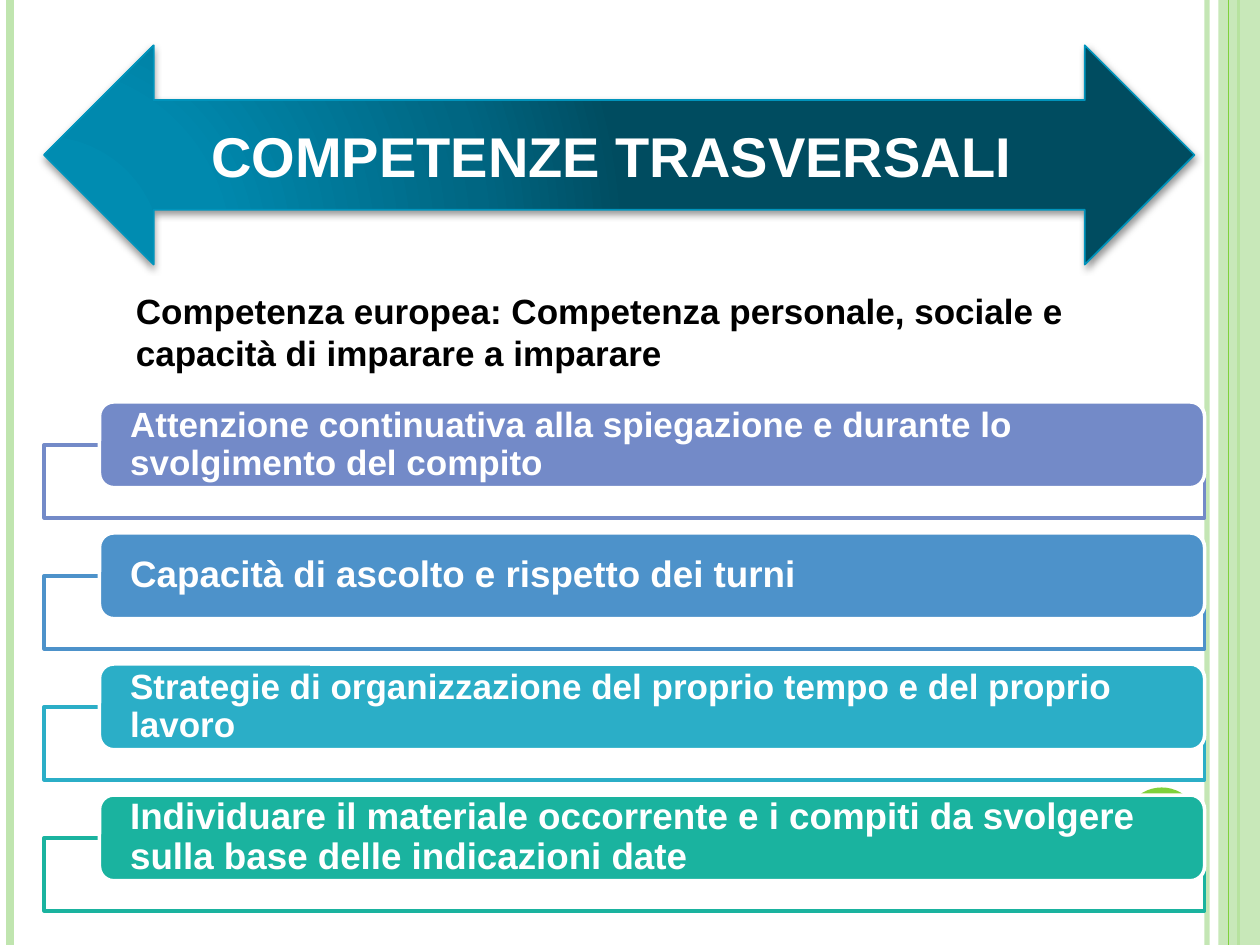
from dataclasses import dataclass

import lxml.etree
import pptx
import pptx.dml.color
import pptx.enum.dml
import pptx.enum.shapes
import pptx.enum.text
import pptx.oxml
import pptx.oxml.ns
import pptx.util

RGBColor = pptx.dml.color.RGBColor
Shapes = pptx.enum.shapes.MSO_SHAPE
Inches = pptx.util.Inches
Pt = pptx.util.Pt

SLIDE_WIDTH = 10
SLIDE_HEIGHT = 7.5
FONT = "Arial"
WHITE = RGBColor(0xFF, 0xFF, 0xFF)
BLACK = RGBColor(0x00, 0x00, 0x00)
PALE_GREEN = RGBColor(0xC0, 0xE5, 0xAF)
GREEN = RGBColor(0x7F, 0xD1, 0x3B)
ARROW_LINE = RGBColor(0x00, 0x94, 0xBC)
ARROW_STOPS = (
    (0, RGBColor(0x00, 0x8E, 0xB4)),
    (30, RGBColor(0x00, 0x89, 0xAE)),
    (75, RGBColor(0x00, 0x66, 0x82)),
    (100, RGBColor(0x00, 0x4C, 0x60)),
)
LEFT = 0.35
FIRST_ROW = 3.19
ROW_PITCH = 1.04


@dataclass(frozen=True)
class Box:
    left: float
    top: float
    width: float
    height: float

    def lengths(self) -> tuple:
        return tuple(map(Inches, (self.left, self.top, self.width, self.height)))


@dataclass(frozen=True)
class Stripe:
    x: float
    color: RGBColor
    weight: float
    opacity: int = 100


@dataclass(frozen=True)
class Skill:
    text: str
    color: RGBColor
    size: int


BACK_STRIPES = (
    Stripe(9.58, PALE_GREEN, 3, 93),
    Stripe(0.08, PALE_GREEN, 4.5),
    Stripe(9.83, GREEN, 1.5),
)
FRONT_STRIPE = Stripe(9.75, GREEN, 0.75)
SKILLS = (
    Skill("Attenzione continuativa alla spiegazione e durante lo svolgimento del compito",
          RGBColor(0x73, 0x8A, 0xC8), 20),
    Skill("Capacità di ascolto e rispetto dei turni", RGBColor(0x4D, 0x92, 0xCA), 21),
    Skill("Strategie di organizzazione del proprio tempo e del proprio lavoro",
          RGBColor(0x2B, 0xAE, 0xC7), 20),
    Skill("Individuare il materiale occorrente e i compiti da svolgere sulla base delle indicazioni date",
          RGBColor(0x1A, 0xB3, 0x9F), 21),
)


def set_opacity(shape, percent: int) -> None:
    color = next(shape.element.spPr.iter(pptx.oxml.ns.qn("a:srgbClr")))
    alpha = lxml.etree.SubElement(color, pptx.oxml.ns.qn("a:alpha"))
    alpha.set("val", str(percent * 1000))


def add_stripe(slide, stripe: Stripe) -> None:
    x = Inches(stripe.x)
    connector = slide.shapes.add_connector(
        pptx.enum.shapes.MSO_CONNECTOR.STRAIGHT, x, 0, x, Inches(SLIDE_HEIGHT))
    connector.line.color.rgb = stripe.color
    connector.line.width = Pt(stripe.weight)
    if stripe.opacity < 100:
        set_opacity(connector, stripe.opacity)
    lxml.etree.SubElement(connector.element.spPr, pptx.oxml.ns.qn("a:effectLst"))


def add_block(slide, kind, box: Box, fill: RGBColor, line: RGBColor | None = None,
              weight: float = 2, opacity: int = 100):
    shape = slide.shapes.add_shape(kind, *box.lengths())
    shape.shadow.inherit = False
    shape.fill.solid()
    shape.fill.fore_color.rgb = fill
    if opacity < 100:
        set_opacity(shape, opacity)
    if line is None:
        shape.line.fill.background()
    else:
        shape.line.color.rgb = line
        shape.line.width = Pt(weight)
    return shape


def write(shape, text: str, size: int, color: RGBColor, alignment, anchor):
    frame = shape.text_frame
    frame.text = text
    frame.word_wrap = True
    frame.vertical_anchor = anchor
    paragraph = frame.paragraphs[0]
    paragraph.alignment = alignment
    for run in paragraph.runs:
        run.font.name = FONT
        run.font.size = Pt(size)
        run.font.bold = True
        run.font.color.rgb = color
    return frame


def add_title_arrow(slide, box: Box) -> None:
    arrow = add_block(slide, Shapes.LEFT_RIGHT_ARROW, box, ARROW_LINE, ARROW_LINE, 1)
    properties = arrow.element.spPr
    namespace = pptx.oxml.ns.nsdecls("a")
    stops = "".join(f'<a:gs pos="{position * 1000}"><a:srgbClr val="{color}"/></a:gs>'
                    for position, color in ARROW_STOPS)
    gradient = pptx.oxml.parse_xml(
        f'<a:gradFill {namespace} rotWithShape="1"><a:gsLst>{stops}</a:gsLst><a:path path="circle">'
        '<a:fillToRect l="5000" t="100000" r="120000" b="10000"/></a:path></a:gradFill>')
    properties.replace(properties.find(pptx.oxml.ns.qn("a:solidFill")), gradient)
    shadow = pptx.oxml.parse_xml(
        f'<a:outerShdw {namespace} blurRad="{Pt(4)}" dist="{Pt(1.6)}" dir="5400000" rotWithShape="0">'
        '<a:srgbClr val="000000"><a:alpha val="42000"/></a:srgbClr></a:outerShdw>')
    properties.find(pptx.oxml.ns.qn("a:effectLst")).append(shadow)

    title = slide.shapes.title
    arrow.element.addnext(title.element)
    title.left, title.top, title.width, title.height = Box(
        box.left + 0.44, box.top + box.height / 4, box.width - 0.88, box.height / 2).lengths()
    frame = write(title, "COMPETENZE TRASVERSALI ", 32, WHITE,
                  pptx.enum.text.PP_ALIGN.CENTER, pptx.enum.text.MSO_ANCHOR.MIDDLE)
    frame.auto_size = pptx.enum.text.MSO_AUTO_SIZE.NONE


def add_skill(slide, row: int, skill: Skill) -> None:
    top = FIRST_ROW + row * ROW_PITCH
    add_block(slide, Shapes.RECTANGLE, Box(LEFT, top + 0.34, 9.21, 0.58),
              WHITE, skill.color, opacity=90)
    pill = add_block(slide, Shapes.ROUNDED_RECTANGLE, Box(LEFT + 0.44, top, 8.77, 0.68),
                     skill.color, WHITE)
    frame = write(pill, skill.text, skill.size, WHITE,
                  pptx.enum.text.PP_ALIGN.LEFT, pptx.enum.text.MSO_ANCHOR.MIDDLE)
    frame.margin_left = frame.margin_right = Inches(0.21)
    frame.margin_top = frame.margin_bottom = 0
    frame.paragraphs[0].line_spacing = 0.9


def main() -> None:
    presentation = pptx.Presentation()
    presentation.slide_width = Inches(SLIDE_WIDTH)
    presentation.slide_height = Inches(SLIDE_HEIGHT)
    slide = presentation.slides.add_slide(presentation.slide_layouts.get_by_name("Title Only"))

    for stripe in BACK_STRIPES:
        add_stripe(slide, stripe)
    add_block(slide, Shapes.RECTANGLE, Box(9.67, 0, 0.33, SLIDE_HEIGHT), PALE_GREEN, opacity=87)
    add_stripe(slide, FRONT_STRIPE)
    add_block(slide, Shapes.OVAL, Box(8.92, 6.25, 0.6, 0.6), GREEN)

    add_title_arrow(slide, Box(LEFT, 0.36, 9.13, 1.74))
    subtitle = slide.shapes.add_textbox(*Box(0.98, 2.25, 7.95, 0.77).lengths())
    write(subtitle, "Competenza europea: Competenza personale, sociale e capacità di imparare a imparare",
          20, BLACK, pptx.enum.text.PP_ALIGN.LEFT, pptx.enum.text.MSO_ANCHOR.TOP)
    for row, skill in enumerate(SKILLS):
        add_skill(slide, row, skill)

    presentation.save("out.pptx")


if __name__ == "__main__":
    main()
